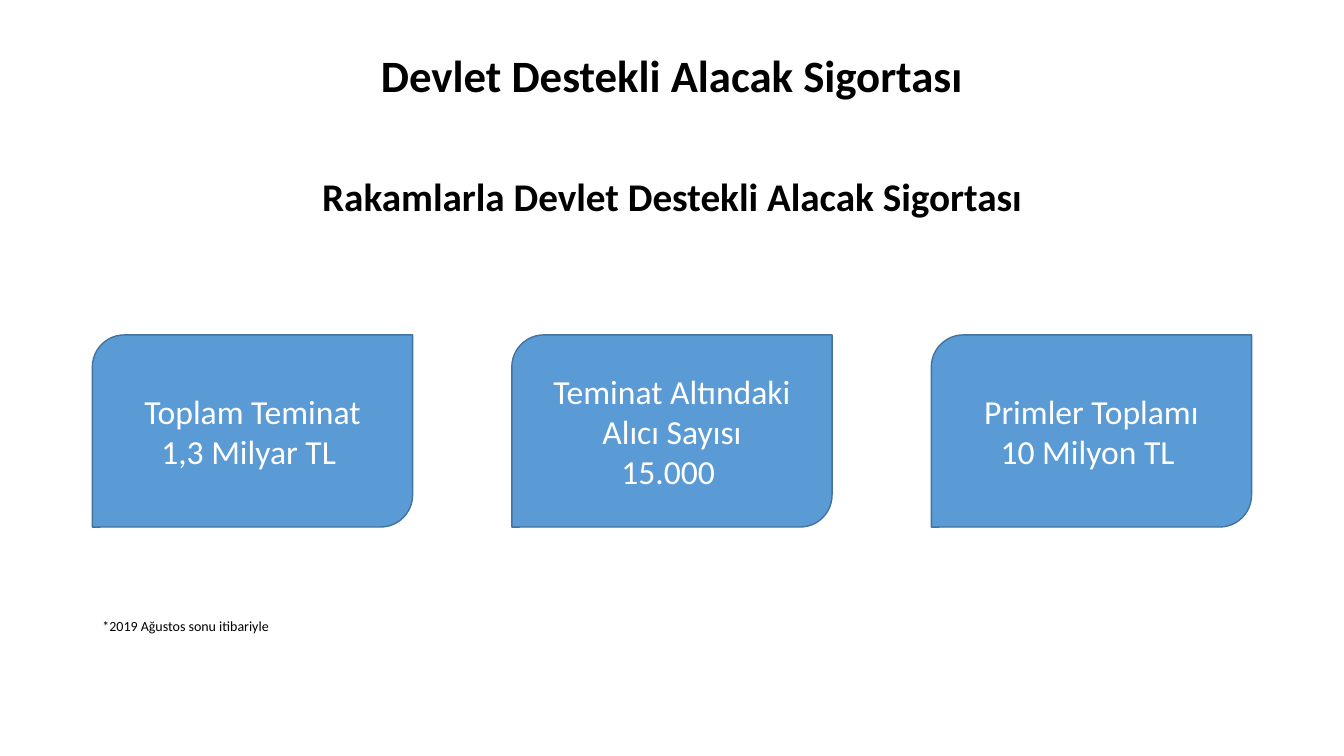
from dataclasses import dataclass
from typing import NamedTuple

from lxml import etree
from pptx import Presentation
from pptx.dml.color import RGBColor
from pptx.enum.shapes import MSO_SHAPE
from pptx.enum.text import MSO_ANCHOR, MSO_AUTO_SIZE, PP_ALIGN
from pptx.oxml.ns import qn
from pptx.util import Pt

CARD_SHAPE = MSO_SHAPE.ROUND_2_DIAG_RECTANGLE
TOP, MIDDLE = MSO_ANCHOR.TOP, MSO_ANCHOR.MIDDLE
LEFT, CENTER = PP_ALIGN.LEFT, PP_ALIGN.CENTER
NO_AUTOFIT = MSO_AUTO_SIZE.NONE
EMU_PER_PX = 9525


@dataclass(frozen=True)
class Theme:
    font: str = "Calibri"
    ink: str = "000000"
    card_text: str = "FFFFFF"
    card_fill: str = "5B9BD5"
    card_line: str = "43739E"
    title_size: int = 32
    subtitle_size: int = 28
    card_size: int = 24
    note_size: int = 10


class Box(NamedTuple):
    left: float
    top: float
    width: float
    height: float


THEME = Theme()
CARDS = [
    ("Toplam Teminat", "1,3 Milyar TL "),
    ("Teminat Altındaki Alıcı Sayısı", "15.000 "),
    ("Primler Toplamı", "10 Milyon TL "),
]


def px(length):
    return round(length * EMU_PER_PX)


def place(shape, box):
    shape.left, shape.top, shape.width, shape.height = map(px, box)


def prepare_frame(shape, anchor):
    frame = shape.text_frame
    frame.word_wrap = True
    frame.auto_size = NO_AUTOFIT
    frame.vertical_anchor = anchor
    return frame


def write(para, text, size, color=THEME.ink, bold=False, align=CENTER,
          line_spacing=1.0, space_before=0):
    properties = para._p.get_or_add_pPr()
    properties.set("marL", "0")
    properties.set("indent", "0")
    etree.SubElement(properties, qn("a:buNone"))
    para.alignment = align
    para.line_spacing = line_spacing
    para.space_before = Pt(space_before)
    span = para.add_run()
    span.text = text
    span.font.name = THEME.font
    span.font.size = Pt(size)
    span.font.bold = bold
    span.font.color.rgb = RGBColor.from_string(color)


def add_title(page, box):
    title = page.shapes.title
    place(title, box)
    frame = prepare_frame(title, MIDDLE)
    write(frame.paragraphs[0], "Devlet Destekli Alacak Sigortası",
          THEME.title_size, bold=True, line_spacing=0.9)


def add_body(page, box):
    body = page.placeholders[1]
    place(body, box)
    frame = prepare_frame(body, TOP)
    frame.margin_top = px(38)
    write(frame.paragraphs[0], "Rakamlarla Devlet Destekli Alacak Sigortası",
          THEME.subtitle_size, bold=True, line_spacing=0.8)
    # The note sits below the row of cards
    write(frame.add_paragraph(), "*2019 Ağustos sonu itibariyle",
          THEME.note_size, align=LEFT, line_spacing=0.8, space_before=287)


def add_card(page, box, lines):
    card = page.shapes.add_shape(CARD_SHAPE, *map(px, box))
    card.shadow.inherit = False
    card.fill.solid()
    card.fill.fore_color.rgb = RGBColor.from_string(THEME.card_fill)
    card.line.color.rgb = RGBColor.from_string(THEME.card_line)
    card.line.width = Pt(1)
    frame = prepare_frame(card, MIDDLE)
    for index, text in enumerate(lines):
        para = frame.add_paragraph() if index else frame.paragraphs[0]
        write(para, text, THEME.card_size, color=THEME.card_text)


def add_card_row(page, box, card_width=305):
    pitch = (box.width - card_width) / (len(CARDS) - 1)
    for index, lines in enumerate(CARDS):
        left = box.left + index * pitch
        add_card(page, Box(left, box.top, card_width, box.height), lines)


def main():
    deck = Presentation()
    deck.slide_width, deck.slide_height = px(1280), px(720)
    page = deck.slides.add_slide(deck.slide_layouts[1])
    add_title(page, Box(88, 47, 1104, 54))
    add_body(page, Box(88, 135, 1104, 491))
    add_card_row(page, Box(88, 319, 1104, 183))
    deck.save("out.pptx")


if __name__ == "__main__":
    main()
